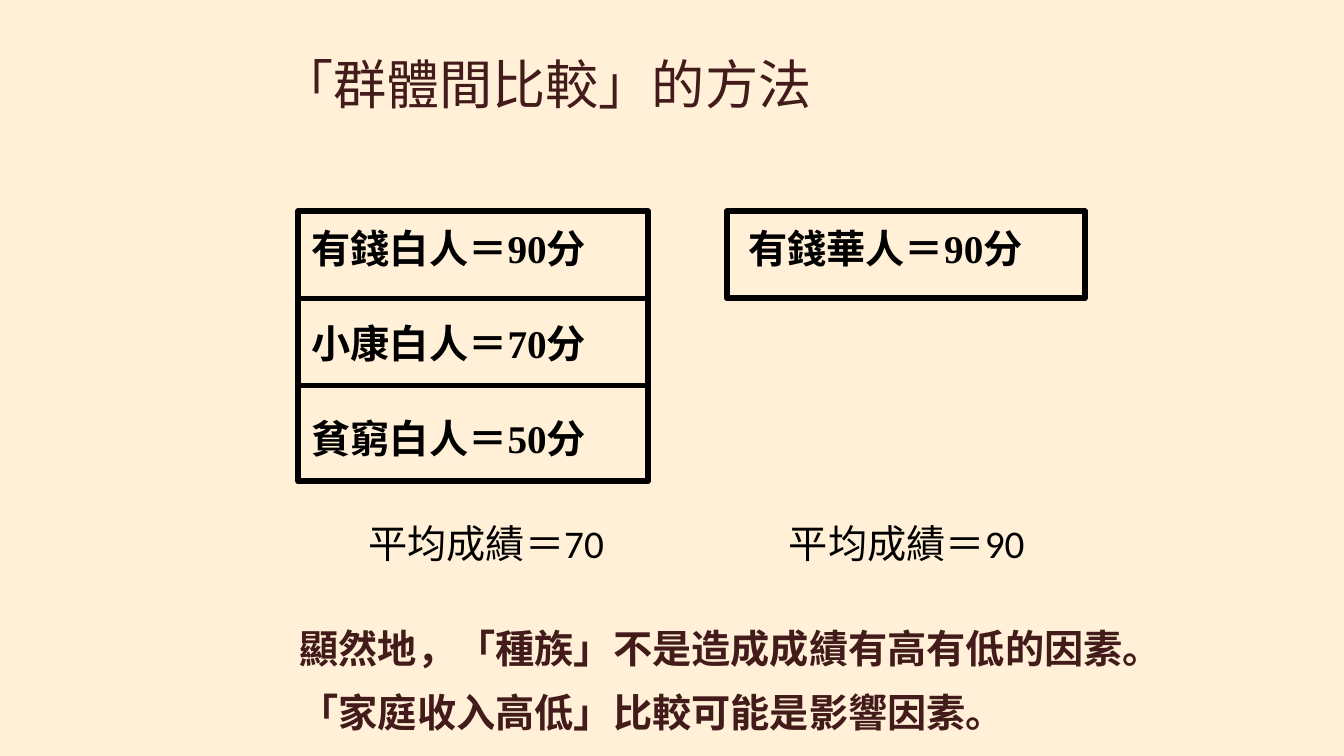
"""Build the slide on comparing test scores between groups."""
from lxml import etree
from pptx import Presentation
from pptx.dml.color import RGBColor
from pptx.enum.shapes import MSO_CONNECTOR, MSO_SHAPE
from pptx.enum.text import MSO_ANCHOR
from pptx.oxml.ns import qn
from pptx.util import Cm, Pt

RECT = MSO_SHAPE.RECTANGLE
STRAIGHT = MSO_CONNECTOR.STRAIGHT
TOP, MIDDLE = MSO_ANCHOR.TOP, MSO_ANCHOR.MIDDLE
SANS, SERIF = "Calibri", "Times New Roman"
COLORS = {"background": "FFF0D7", "heading": "421B1A", "ink": "000000"}

TITLE = "「群體間比較」的方法"
CONCLUSIONS = [
    "顯然地，「種族」不是造成成績有高有低的因素。",
    "「家庭收入高低」比較可能是影響因素。",
]
GROUPS = [
    {
        "box": (5.64, 6.6, 5.11), "text_left": 5.64, "mean_left": 6.71,
        "rows": [
            [("有錢白人＝90分", SERIF)],
            [("小康白人＝70分", SERIF)],
            [("貧窮白人＝50分", SERIF)],
        ],
        "mean": "平均成績＝70",
    },
    {
        "box": (13.74, 6.76, 1.65), "text_left": 13.89, "mean_left": 14.66,
        "rows": [[("有錢", SANS), ("華人＝90分", SERIF)]],
        "mean": "平均成績＝90",
    },
]
BOX_TOP, DIVIDER_STEP = 3.99, 1.65
TEXT_TOP, TEXT_STEP, TEXT_HEIGHT = 4.11, 1.8, 1.14
MEAN_TOP, MEAN_WIDTH = 9.7, 5.11


def rgb(name):
    return RGBColor.from_string(COLORS[name])


def add_text(s, box, paragraphs, color="ink", size=21, bold=False, anchor=TOP):
    tf = s.shapes.add_textbox(*map(Cm, box)).text_frame
    tf.word_wrap = True
    tf.vertical_anchor = anchor
    for i, runs in enumerate(paragraphs):
        p = tf.paragraphs[0] if i == 0 else tf.add_paragraph()
        for text, font in runs:
            r = p.add_run()
            r.text = text
            r.font.name, r.font.size, r.font.bold = font, Pt(size), bold
            r.font.color.rgb = rgb(color)
    return tf


def set_line(shape, width):
    shape.line.color.rgb = rgb("ink")
    shape.line.width = Pt(width)


def add_group(s, group):
    left, width, height = group["box"]
    sp = s.shapes.add_shape(RECT, *map(Cm, (left, BOX_TOP, width, height)))
    sp.shadow.inherit = False
    sp.fill.background()
    set_line(sp, 3.25)
    for i, runs in enumerate(group["rows"]):
        if i:
            y = BOX_TOP + i * DIVIDER_STEP
            divider = s.shapes.add_connector(
                STRAIGHT, Cm(left), Cm(y), Cm(left + width), Cm(y))
            set_line(divider, 3)
            etree.SubElement(divider._element.spPr, qn("a:effectLst"))
        top = TEXT_TOP + i * TEXT_STEP
        add_text(s, (group["text_left"], top, width, TEXT_HEIGHT), [runs], bold=True)
    add_text(s, (group["mean_left"], MEAN_TOP, MEAN_WIDTH, TEXT_HEIGHT),
             [[(group["mean"], SANS)]])


def main():
    prs = Presentation()
    prs.slide_width, prs.slide_height = Cm(25.4), Cm(14.29)
    s = prs.slides.add_slide(prs.slide_layouts[6])
    s.background.fill.solid()
    s.background.fill.fore_color.rgb = rgb("background")

    add_text(s, (5.05, 0.08, 15.72, 2.97), [[(TITLE, SANS)]],
             color="heading", size=28.5, anchor=MIDDLE)
    for group in GROUPS:
        add_group(s, group)
    tf = add_text(s, (5.05, 11.51, 17.25, 2.54), [[(t, SERIF)] for t in CONCLUSIONS],
                  color="heading", bold=True, anchor=MIDDLE)
    for i, p in enumerate(tf.paragraphs):
        p.line_spacing = 1.15
        p.space_before = Pt(5.2 if i else 0)
        pPr = p._p.get_or_add_pPr()
        pPr.set("marL", str(Cm(1.27)))
        pPr.set("indent", str(Cm(-0.91)))
    prs.save("out.pptx")


if __name__ == "__main__":
    main()
